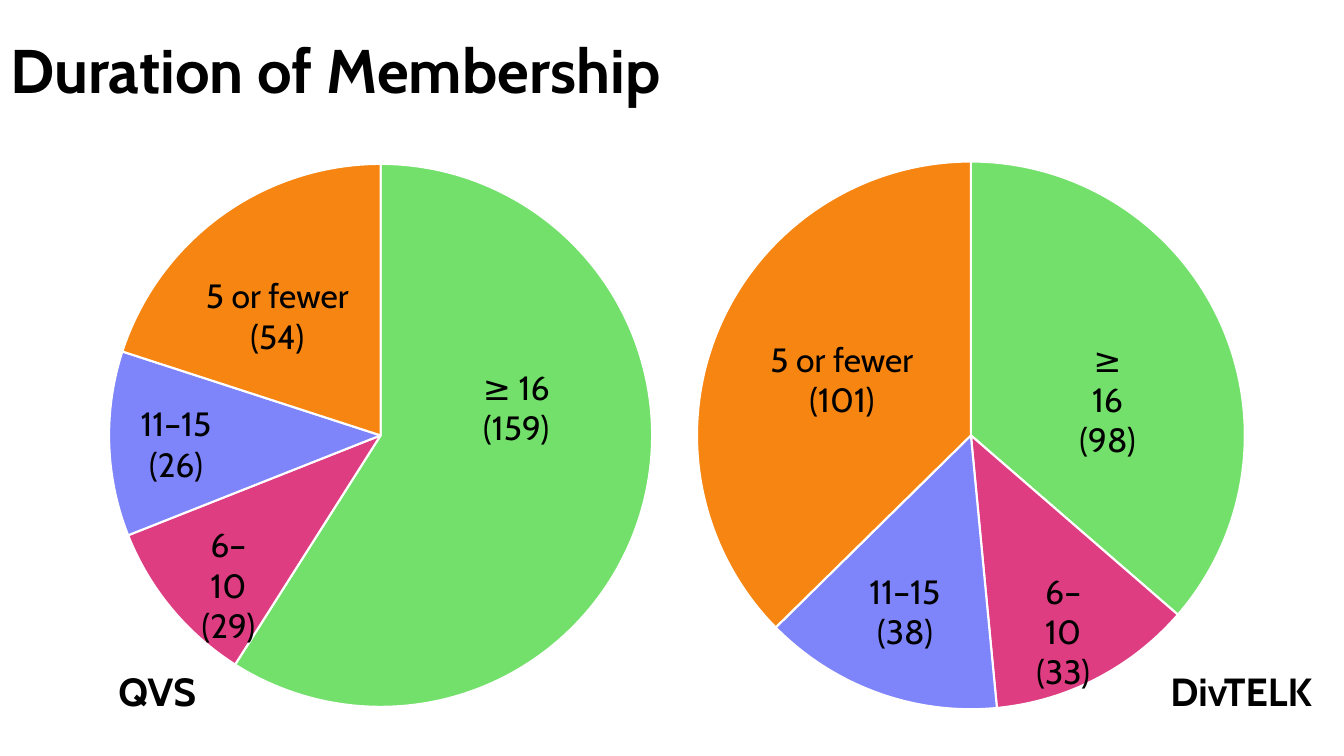
from dataclasses import dataclass

from lxml.etree import SubElement
from pptx import Presentation
from pptx.chart.data import CategoryChartData
from pptx.dml.color import RGBColor
from pptx.enum.chart import XL_CHART_TYPE
from pptx.enum.text import MSO_ANCHOR, MSO_AUTO_SIZE, PP_ALIGN
from pptx.oxml.ns import qn
from pptx.slide import Slide
from pptx.util import Inches, Pt

FONT = "Cabin"
BLACK = RGBColor(0x00, 0x00, 0x00)
WHITE = RGBColor(0xFF, 0xFF, 0xFF)
GREEN = RGBColor(0x72, 0xE0, 0x6A)
PINK = RGBColor(0xDE, 0x3D, 0x82)
BLUE = RGBColor(0x7E, 0x84, 0xFA)
ORANGE = RGBColor(0xF6, 0x85, 0x11)
SLICE_COLORS = (GREEN, PINK, BLUE, ORANGE)
CHART_TOP, CHART_HEIGHT = 1.14, 6.36
PIE_SHARE = 0.95  # pie diameter as a share of the chart width


@dataclass(frozen=True)
class Label:
    lines: tuple[str, ...]
    left: float
    top: float
    width: float
    height: float = 0.91
    size: int = 24
    bold: bool = False


@dataclass(frozen=True)
class Pie:
    left: float
    width: float
    percentages: tuple[int, ...]
    labels: tuple[Label, ...]


PIES = (
    Pie(0.94, 5.67, (59, 10, 11, 20), (
        Label(("5 or fewer", "(54)"), 1.93, 2.68, 1.64),
        Label(("6–10", "(29)"), 1.83, 5.15, 0.87),
        Label(("11–15", "(26)"), 1.22, 3.95, 1.05),
        Label(("≥ 16", "(159)"), 4.65, 3.59, 0.94),
        Label(("QVS",), 1.07, 6.57, 0.98, 0.57, 28, True),
    )),
    Pie(6.77, 5.72, (36, 12, 14, 37), (
        Label(("5 or fewer", "(101)"), 7.53, 3.31, 1.64),
        Label(("6–10", "(33)"), 10.11, 5.61, 0.87),
        Label(("11–15", "(38)"), 8.45, 5.61, 1.05),
        Label(("≥ 16", "(98)"), 10.58, 3.31, 0.81),
        Label(("DivTELK",), 11.39, 6.57, 1.84, 0.57, 28, True),
    )),
)


def add_title(slide: Slide, text: str) -> None:
    title = slide.shapes.title
    title.left, title.top = Inches(0), Inches(0)
    title.width, title.height = Inches(11.5), Inches(1.45)
    frame = title.text_frame
    frame.text = text
    frame.vertical_anchor = MSO_ANCHOR.MIDDLE
    para = frame.paragraphs[0]
    para.alignment = PP_ALIGN.LEFT
    para.line_spacing = 0.9
    para.font.name, para.font.size, para.font.bold = FONT, Pt(44), True
    para.font.color.rgb = BLACK


def add_pie(slide: Slide, pie: Pie) -> None:
    data = CategoryChartData()
    data.categories = ["1", "2", "3", "4"]
    data.add_series("Series 1", pie.percentages)
    chart = slide.shapes.add_chart(
        XL_CHART_TYPE.PIE, Inches(pie.left), Inches(CHART_TOP),
        Inches(pie.width), Inches(CHART_HEIGHT), data).chart
    chart.has_title = False
    chart.has_legend = False
    chart.font.name, chart.font.size = FONT, Pt(10)
    chart.font.color.rgb = BLACK

    plot = chart.plots[0]
    plot.vary_by_categories = True
    for index, color in enumerate(SLICE_COLORS):
        slice_format = plot.series[0].points[index].format
        slice_format.fill.solid()
        slice_format.fill.fore_color.rgb = color
        slice_format.line.color.rgb = WHITE
        slice_format.line.width = Pt(1.5)

    # Centre the pie in the chart frame
    plot_area = chart.element.find(f".//{qn('c:plotArea')}")
    layout = plot_area.find(qn("c:layout"))
    if layout is None:
        layout = SubElement(plot_area, qn("c:layout"))
        plot_area.insert(0, layout)
    manual = SubElement(layout, qn("c:manualLayout"))
    height_share = PIE_SHARE * pie.width / CHART_HEIGHT
    settings = {
        "layoutTarget": "inner", "xMode": "edge", "yMode": "edge",
        "x": (1 - PIE_SHARE) / 2, "y": (1 - height_share) / 2,
        "w": PIE_SHARE, "h": height_share,
    }
    for name, value in settings.items():
        SubElement(manual, qn(f"c:{name}")).set("val", str(value))


def add_label(slide: Slide, label: Label) -> None:
    box = slide.shapes.add_textbox(Inches(label.left), Inches(label.top),
                                   Inches(label.width), Inches(label.height))
    frame = box.text_frame
    frame.word_wrap = True
    frame.auto_size = MSO_AUTO_SIZE.SHAPE_TO_FIT_TEXT
    frame.text = "\n".join(label.lines)
    for para in frame.paragraphs:
        para.alignment = PP_ALIGN.CENTER
        para.font.name, para.font.size = FONT, Pt(label.size)
        para.font.bold = label.bold
        para.font.color.rgb = BLACK


def main() -> None:
    deck = Presentation()
    deck.slide_width, deck.slide_height = Inches(13.33), Inches(7.5)
    slide = deck.slides.add_slide(deck.slide_layouts[5])

    # Charts first, so that the labels lie on top
    for pie in PIES:
        add_pie(slide, pie)
    for pie in PIES:
        for label in pie.labels:
            add_label(slide, label)
    add_title(slide, "Duration of Membership")
    deck.save("out.pptx")


if __name__ == "__main__":
    main()
